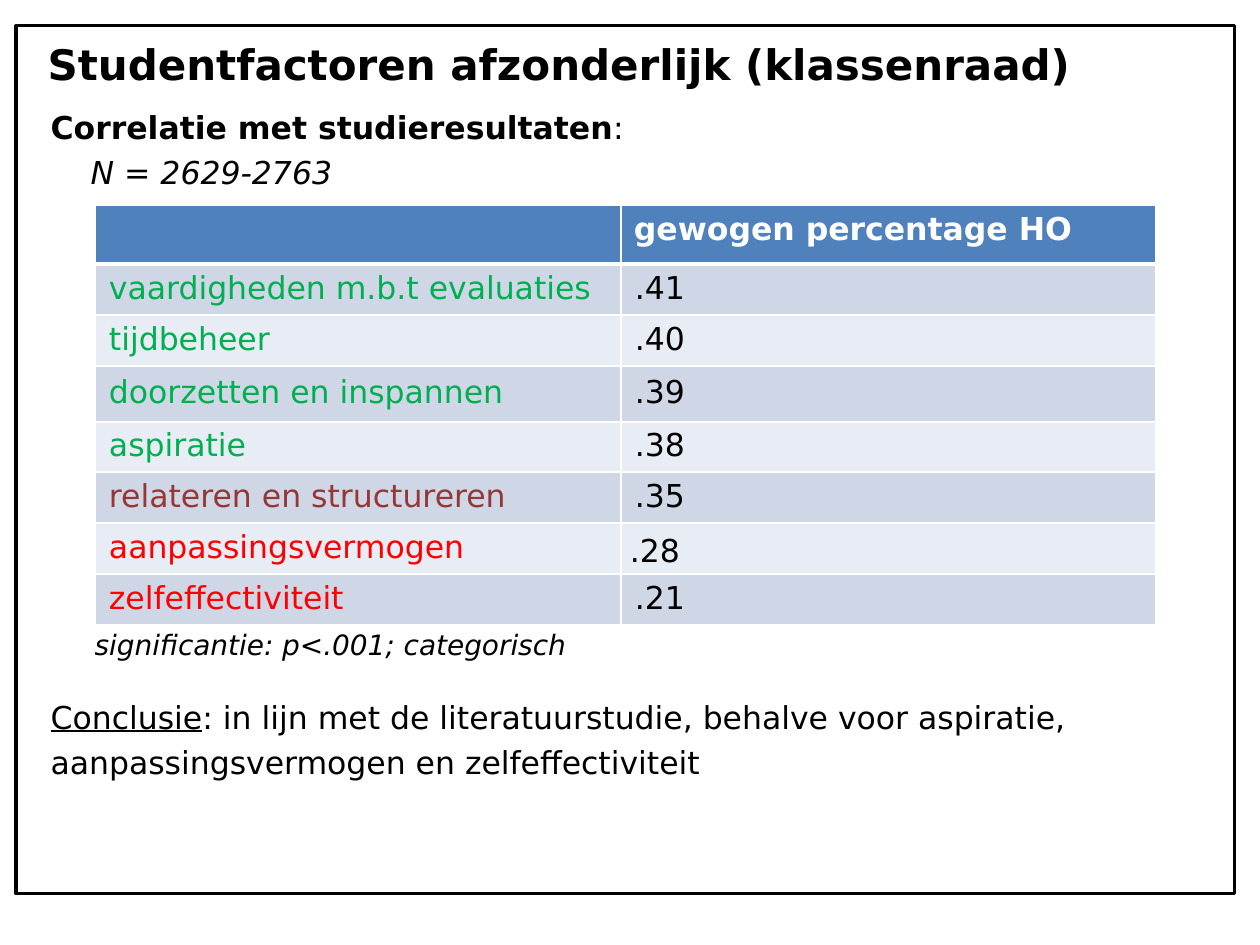
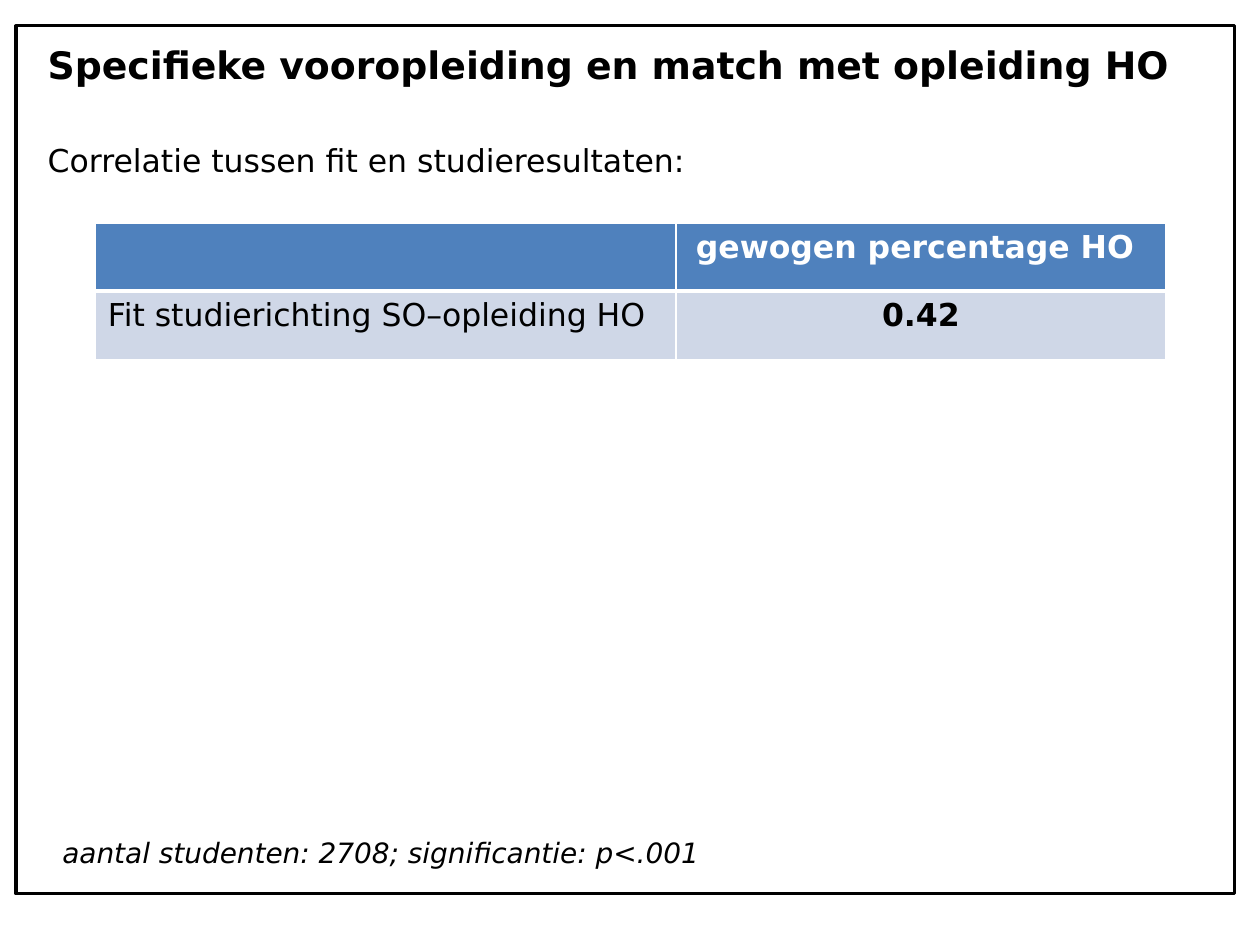
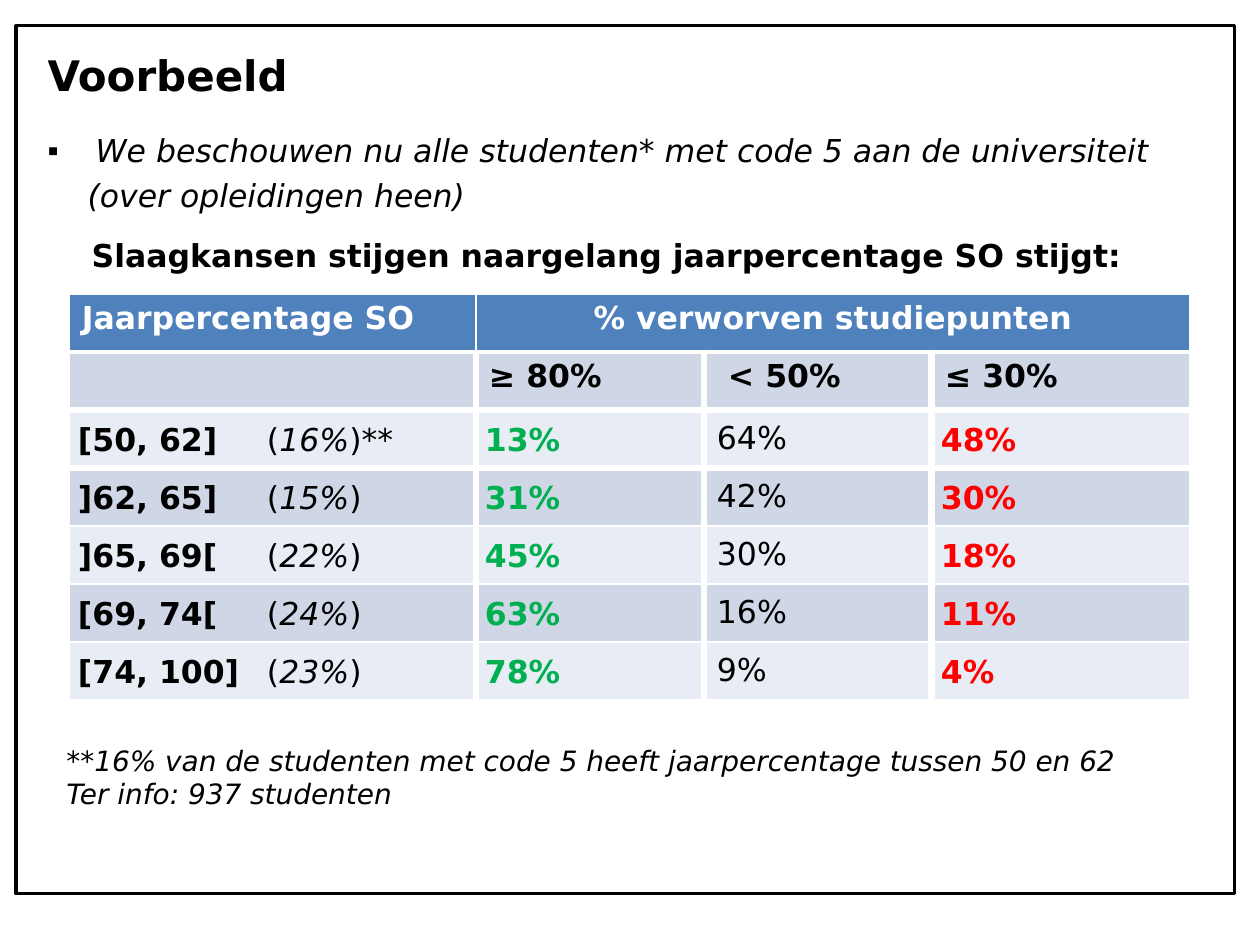
"""Build three slides on student factors, prior education and pass rates."""
import pptx
import pptx.dml.color
import pptx.enum.shapes
import pptx.enum.text
import pptx.oxml.ns
import pptx.util
from lxml import etree

EMU_PER_PX = 914400 / 126
FONT = "DejaVu Sans"
BLACK, WHITE, GREEN, RED, BROWN = "000000", "FFFFFF", "00B050", "FF0000", "953734"
HEADER_FILL, BAND_FILLS = "4F81BD", ("E8ECF4", "CFD7E7")
LEFT, CENTER = pptx.enum.text.PP_ALIGN.LEFT, pptx.enum.text.PP_ALIGN.CENTER
MIDDLE = pptx.enum.text.MSO_ANCHOR.MIDDLE
qn = pptx.oxml.ns.qn
rgb = pptx.dml.color.RGBColor.from_string
px = lambda length: pptx.util.Emu(round(length * EMU_PER_PX))


def write(paragraph, runs, size=18, color=BLACK, before=0, indent=0, hanging=0,
          bullet=None, tab=None, spacing=1.0, align=LEFT):
    """Fill a paragraph with (text, flags) runs, where flags hold b, i or u."""
    properties = paragraph._p.get_or_add_pPr()
    properties.set("marL", str(px(indent)))
    properties.set("indent", str(px(-hanging)))
    if bullet:
        etree.SubElement(properties, qn("a:buChar"), char=bullet)
    else:
        etree.SubElement(properties, qn("a:buNone"))
    if tab:
        tabs = etree.SubElement(properties, qn("a:tabLst"))
        etree.SubElement(tabs, qn("a:tab"), pos=str(px(tab)), algn="l")
    paragraph.alignment = align
    paragraph.line_spacing = spacing
    paragraph.space_before = pptx.util.Pt(before)
    for text, flags in runs:
        run = paragraph.add_run()
        run.text = text
        run.font.name = FONT
        run.font.size = pptx.util.Pt(size)
        run.font.color.rgb = rgb(color)
        run.font.bold = "b" in flags
        run.font.italic = "i" in flags
        run.font.underline = "u" in flags


def add_banded_table(slide, left, top, widths, heights, row_lines, column_lines):
    """Add a table with banded fills and white borders of the given widths."""
    table = slide.shapes.add_table(len(heights), len(widths), px(left), px(top),
                                   px(sum(widths)), px(sum(heights))).table
    for column, width in zip(table.columns, widths):
        column.width = px(width)
    for r, height in enumerate(heights):
        table.rows[r].height = px(height)
        sides = column_lines if r else [1] * len(column_lines)
        for c in range(len(widths)):
            cell = table.cell(r, c)
            properties = cell._tc.get_or_add_tcPr()
            borders = {"L": sides[c], "R": sides[c + 1], "T": row_lines[r], "B": row_lines[r + 1]}
            for side, width in borders.items():
                line = etree.SubElement(properties, qn("a:ln" + side), w=str(pptx.util.Pt(width)))
                fill = etree.SubElement(line, qn("a:solidFill"))
                etree.SubElement(fill, qn("a:srgbClr"), val=WHITE)
            cell.fill.solid()
            cell.fill.fore_color.rgb = rgb(BAND_FILLS[r % 2] if r else HEADER_FILL)
            cell.margin_left = cell.margin_right = px(13)
            cell.margin_top = cell.margin_bottom = px(6)
    return table


presentation = pptx.Presentation()
presentation.slide_width, presentation.slide_height = px(1260), px(945)
layout = presentation.slide_layouts[1]

pages = [
    ("Studentfactoren afzonderlijk (klassenraad)", 24, (35, 26, 1201, 76), (38, 102, 1200, 738), [
        dict(runs=[("Correlatie met studieresultaten", "b"), (":", "")]),
        dict(runs=[("N = 2629-2763", "i")], before=4.2, indent=40),
        dict(runs=[("significantie: p<.001; categorisch", "i")], size=16, before=249.5, indent=44),
        dict(runs=[("Conclusie", "u"),
                   (": in lijn met de literatuurstudie, behalve voor aspiratie,", "")], before=21),
        dict(runs=[("aanpassingsvermogen en zelfeffectiviteit", "")], before=4.2)]),
    ("Specifieke vooropleiding en match met opleiding HO", 21.6, (35, 26, 1211, 76),
     (35, 135, 1191, 694), [
        dict(runs=[("Correlatie tussen fit en studieresultaten:", "")])]),
    ("Voorbeeld", 24, (35, 37, 1191, 76), (35, 125, 1191, 694), [
        dict(runs=[("We beschouwen nu alle studenten* met code 5 aan de universiteit", "i")],
             indent=48, hanging=48, bullet="▪"),
        dict(runs=[("(over opleidingen heen)", "i")], before=4.2, indent=40),
        dict(runs=[("Slaagkansen stijgen naargelang jaarpercentage SO stijgt:", "b")],
             before=12.2, indent=44)]),
]
for title, title_size, title_box, body_box, paragraphs in pages:
    slide = presentation.slides.add_slide(layout)
    body = slide.placeholders[1]
    for shape, box in ((slide.shapes.title, title_box), (body, body_box)):
        shape.left, shape.top, shape.width, shape.height = map(px, box)
        shape.text_frame.auto_size = pptx.enum.text.MSO_AUTO_SIZE.NONE
    slide.shapes.title.text_frame.vertical_anchor = MIDDLE
    write(slide.shapes.title.text_frame.paragraphs[0], [(title, "b")], title_size)
    for number, content in enumerate(paragraphs):
        frame = body.text_frame
        write(frame.add_paragraph() if number else frame.paragraphs[0], **content)

factor_slide, fit_slide, example_slide = presentation.slides

border = factor_slide.shapes.add_shape(
    pptx.enum.shapes.MSO_SHAPE.RECTANGLE, px(16), px(26), px(1219), px(868))
border.shadow.inherit = False
border.fill.background()
border.line.color.rgb = rgb(BLACK)
border.line.width = pptx.util.Pt(1.75)
border.element.xpath("./p:nvSpPr/p:cNvPr")[0].set("id", "20")
layout.shapes.element.insert(2, border.element)

factors = [
    ("vaardigheden m.b.t evaluaties", ".41", GREEN),
    ("tijdbeheer", ".40", GREEN),
    ("doorzetten en inspannen", ".39", GREEN),
    ("aspiratie", ".38", GREEN),
    ("relateren en structureren", ".35", BROWN),
    ("aanpassingsvermogen", ".28", RED),
    ("zelfeffectiviteit", ".21", RED),
]
table = add_banded_table(factor_slide, 95, 205, [526, 535], [59, 51, 51, 56, 50, 51, 51, 51],
                         [1, 3] + [1] * 7, [1] * 3)
write(table.cell(0, 1).text_frame.paragraphs[0], [("gewogen percentage HO", "b")], color=WHITE)
for r, (factor, correlation, color) in enumerate(factors, 1):
    for c, (text, text_color) in enumerate(((factor, color), (correlation, BLACK))):
        cell = table.cell(r, c)
        outdented = text == ".28"
        cell.vertical_anchor = MIDDLE
        cell.margin_left = px(9 if outdented else 14)
        cell.margin_top = cell.margin_bottom = 0
        write(cell.text_frame.paragraphs[0], [(text, "")], color=text_color,
              spacing=1.15 if outdented else 0.89)

table = add_banded_table(fit_slide, 95, 223, [581, 490], [68, 69], [1, 3, 1], [1] * 3)
table.cell(0, 1).margin_right = px(25)
write(table.cell(0, 1).text_frame.paragraphs[0], [("gewogen percentage HO", "b")],
      color=WHITE, align=CENTER)
write(table.cell(1, 0).text_frame.paragraphs[0], [("Fit studierichting SO–opleiding HO", "")])
write(table.cell(1, 1).text_frame.paragraphs[0], [("0.42", "b")], align=CENTER)

pass_rates = [
    ("[50, 62]", "16%", ")**", "13%", "64%", "48%"),
    ("]62, 65]", "15%", ")", "31%", "42%", "30%"),
    ("]65, 69[", "22%", ")", "45%", "30%", "18%"),
    ("[69, 74[", "24%", ")", "63%", "16%", "11%"),
    ("[74, 100]", "23%", ")", "78%", "9%", "4%"),
]
table = add_banded_table(example_slide, 69, 294, [407, 228, 228, 258], [58] * 7,
                         [1, 3, 4.5, 4.5, 1, 1, 1, 1], [1, 4.5, 4.5, 4.5, 1])
table.cell(0, 1).merge(table.cell(0, 3))
write(table.cell(0, 0).text_frame.paragraphs[0], [("Jaarpercentage SO", "b")], color=WHITE)
write(table.cell(0, 1).text_frame.paragraphs[0], [("% verworven studiepunten", "b")],
      color=WHITE, align=CENTER)
for c, threshold in enumerate(("≥ 80%", "< 50%", "≤ 30%"), 1):
    write(table.cell(1, c).text_frame.paragraphs[0], [(threshold, "b")])
table.cell(1, 2).margin_left = px(24)
for r, (interval, share, closing, high, low, lowest) in enumerate(pass_rates, 2):
    interval_runs = [(interval, "b"), ("\t(", ""), (share, "i"), (closing, "")]
    columns = [(interval_runs, BLACK, 9, 1.07), ([(high, "b")], GREEN, 9, 1.07),
               ([(low, "")], BLACK, 13, 1.0), ([(lowest, "b")], RED, 9, 1.07)]
    for c, (runs, color, margin, spacing) in enumerate(columns):
        cell = table.cell(r, c)
        cell.vertical_anchor = MIDDLE
        cell.margin_left = px(margin)
        cell.margin_top = cell.margin_bottom = 0
        write(cell.text_frame.paragraphs[0], runs, color=color, spacing=spacing,
              tab=None if c else 184)

captions = [
    (fit_slide, (50, 829, 774, 47), ["aantal studenten: 2708; significantie: p<.001"]),
    (example_slide, (54, 737, 1111, 81),
     ["**16% van de studenten met code 5 heeft jaarpercentage tussen 50 en 62",
      "Ter info: 937 studenten"]),
]
for slide, box, lines in captions:
    frame = slide.shapes.add_textbox(*map(px, box)).text_frame
    frame.word_wrap = True
    for number, line in enumerate(lines):
        write(frame.add_paragraph() if number else frame.paragraphs[0], [(line, "i")], 16)

presentation.save("out.pptx")
